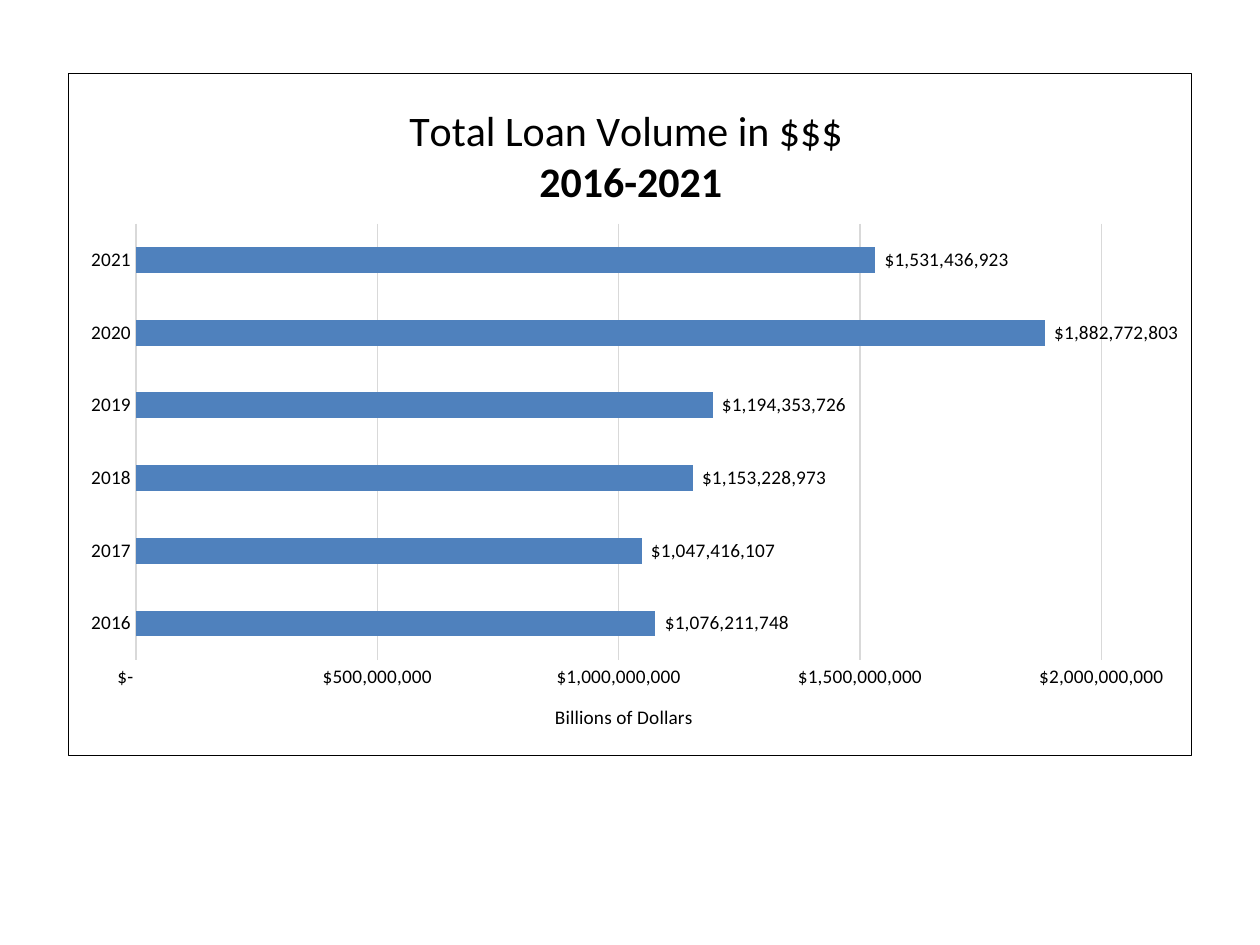
import pptx
import pptx.util
import pptx.chart.data
import pptx.dml.color
import pptx.enum.chart
import pptx.oxml

COLORS = {"text": "000000", "bar": "4F81BD", "grid": "D9D9D9", "border": "000000"}
FONT = "Calibri"
MONEY = r'_("$"* #,##0_);_("$"* \(#,##0\);_("$"* "-"??_);_(@_)'
TITLE = [("Total Loan Volume in $$$ ", False), ("2016-2021", True)]
AXIS_TITLE = "Billions of Dollars "
LOANS = {
    "2016": 1076211748,
    "2017": 1047416107,
    "2018": 1153228973,
    "2019": 1194353726,
    "2020": 1882772803,
    "2021": 1531436923,
}
FRAME = (0.54, 0.58, 8.92, 5.42)
NS = 'xmlns:c="http://schemas.openxmlformats.org/drawingml/2006/chart"'
NS_A = 'xmlns:a="http://schemas.openxmlformats.org/drawingml/2006/main"'


def rgb(name):
    return pptx.dml.color.RGBColor.from_string(COLORS[name])


def style(font, size, bold=False):
    font.name = FONT
    font.size = pptx.util.Pt(size)
    font.bold = bold
    font.color.rgb = rgb("text")


def add_text(p, text, size=11, bold=False):
    r = p.add_run()
    r.text = text
    style(r.font, size, bold)


def outline(line, name):
    line.color.rgb = rgb(name)
    line.width = pptx.util.Pt(0.75)


def place(element, before, x, y, w=None, h=None):
    for old in element.findall(pptx.oxml.ns.qn("c:layout")):
        element.remove(old)
    inner = '<c:layoutTarget val="inner"/>' if w else ""
    parts = "".join(f'<c:{k}Mode val="edge"/>' for k in "xy")
    sizes = {"x": x, "y": y, "w": w, "h": h}
    parts += "".join(f'<c:{k} val="{v}"/>' for k, v in sizes.items() if v)
    layout = pptx.oxml.parse_xml(
        f"<c:layout {NS}><c:manualLayout>{inner}{parts}</c:manualLayout></c:layout>")
    following = element.find(pptx.oxml.ns.qn(before))
    if following is None:
        element.append(layout)
    else:
        following.addprevious(layout)


def add_border(chart):
    sp_pr = pptx.oxml.parse_xml(
        f'<c:spPr {NS} {NS_A}><a:noFill/><a:ln w="{pptx.util.Pt(0.75)}"><a:solidFill>'
        f'<a:srgbClr val="{COLORS["border"]}"/></a:solidFill></a:ln></c:spPr>')
    chart.element.find(pptx.oxml.ns.qn("c:chart")).addnext(sp_pr)


def main():
    prs = pptx.Presentation()
    prs.slide_width = pptx.util.Inches(10)
    prs.slide_height = pptx.util.Inches(7.5)
    s = prs.slides.add_slide(prs.slide_layouts[6])

    data = pptx.chart.data.CategoryChartData(number_format=MONEY)
    data.categories = list(LOANS)
    data.add_series("Series 1", list(LOANS.values()))
    chart = s.shapes.add_chart(
        pptx.enum.chart.XL_CHART_TYPE.BAR_CLUSTERED,
        *map(pptx.util.Inches, FRAME), data).chart
    style(chart.font, 10)
    chart.has_legend = False
    add_border(chart)

    tf = chart.chart_title.text_frame
    for i, (text, bold) in enumerate(TITLE):
        p = tf.add_paragraph() if i else tf.paragraphs[0]
        add_text(p, text, size=24, bold=bold)
    chart.chart_title.include_in_layout = False
    place(chart.chart_title._element, "c:overlay", 0.3, 0.04)

    plot = chart.plots[0]
    plot.gap_width = 182
    plot.vary_by_categories = False
    fill = plot.series[0].format.fill
    fill.solid()
    fill.fore_color.rgb = rgb("bar")
    plot.has_data_labels = True
    labels = plot.data_labels
    labels.show_value = True
    labels.position = pptx.enum.chart.XL_LABEL_POSITION.OUTSIDE_END
    labels.number_format = MONEY
    labels.number_format_is_linked = False
    style(labels.font, 11)

    for axis in (chart.category_axis, chart.value_axis):
        axis.major_tick_mark = pptx.enum.chart.XL_TICK_MARK.NONE
        axis.minor_tick_mark = pptx.enum.chart.XL_TICK_MARK.NONE
        style(axis.tick_labels.font, 11)
    outline(chart.category_axis.format.line, "grid")
    values = chart.value_axis
    values.format.line.fill.background()
    values.minimum_scale = 0
    values.maximum_scale = 2_000_000_000
    values.major_unit = 500_000_000
    values.tick_labels.number_format = MONEY
    values.tick_labels.number_format_is_linked = False
    values.has_major_gridlines = True
    outline(values.major_gridlines.format.line, "grid")
    add_text(values.axis_title.text_frame.paragraphs[0], AXIS_TITLE)
    place(values.axis_title._element, "c:overlay", 0.43, 0.92)

    plot_area = chart.element.find(".//" + pptx.oxml.ns.qn("c:plotArea"))
    place(plot_area, "c:barChart", 0.06, 0.22, 0.86, 0.64)
    prs.save("out.pptx")


if __name__ == "__main__":
    main()
